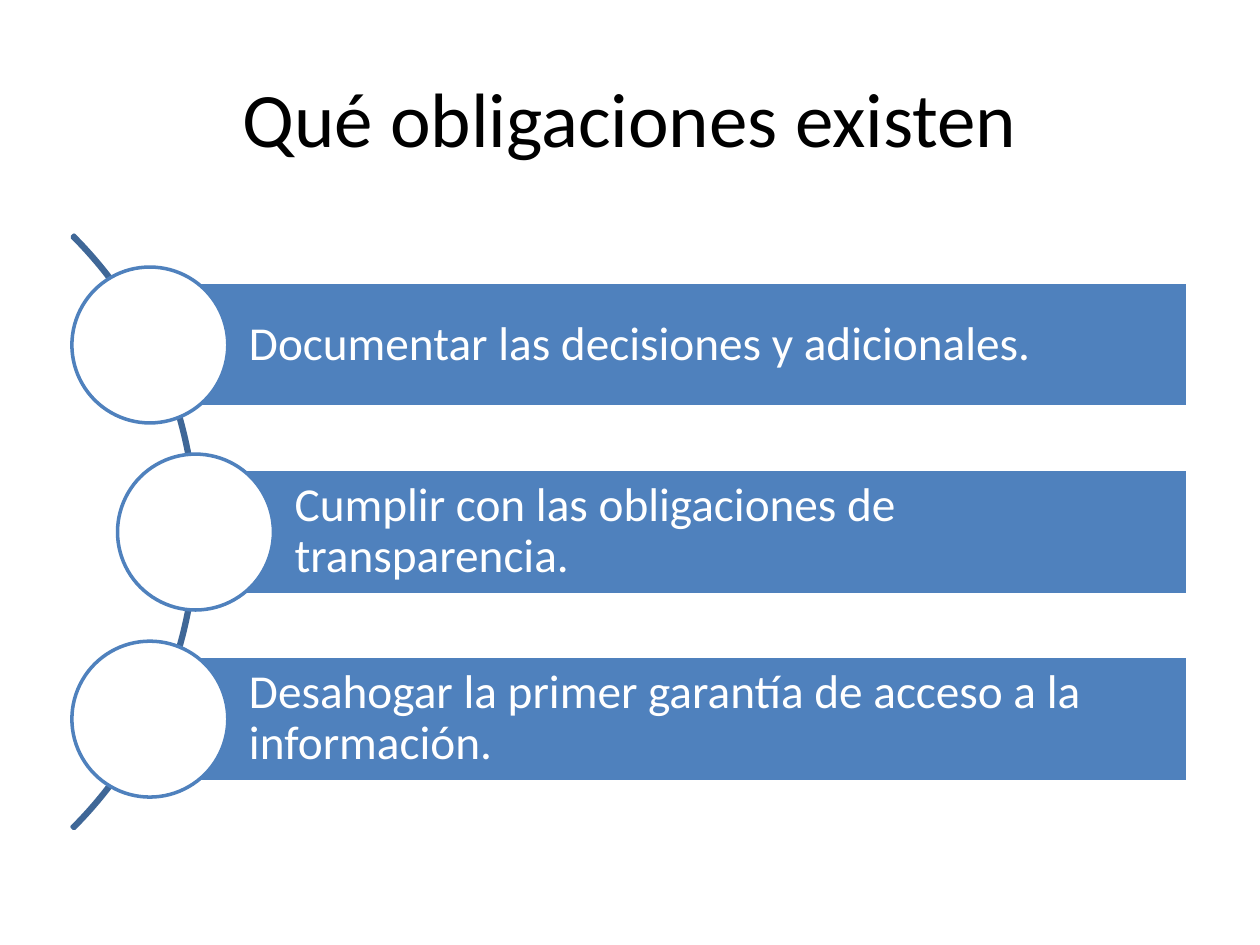
import pptx
import pptx.dml.color
import pptx.enum.shapes
import pptx.enum.text
import pptx.util

Cm = pptx.util.Cm
SHAPES = pptx.enum.shapes.MSO_SHAPE
ALIGN = pptx.enum.text.PP_ALIGN

BLUE = "4F81BD"
DARK_BLUE = "3F6797"
WHITE = "FFFFFF"
BLACK = "000000"

OBLIGATIONS = [
    "Documentar las decisiones y adicionales.",
    "Cumplir con las obligaciones de transparencia.",
    "Desahogar la primer garantía de acceso a la información.",
]


def color(value):
    """Turn a hex string into a colour."""
    return pptx.dml.color.RGBColor.from_string(value)


def write(shape, text, size, fill, align=ALIGN.LEFT, spacing=1.0,
          insets=(0.25, 0.13, 0.25, 0.13)):
    """Write one vertically centred paragraph into a shape."""
    frame = shape.text_frame
    frame.word_wrap = True
    frame.vertical_anchor = pptx.enum.text.MSO_ANCHOR.MIDDLE
    (frame.margin_left, frame.margin_top,
     frame.margin_right, frame.margin_bottom) = map(Cm, insets)
    paragraph = frame.paragraphs[0]
    paragraph.alignment = align
    paragraph.line_spacing = spacing
    run = paragraph.add_run()
    run.text = text
    run.font.name = "Calibri"
    run.font.size = pptx.util.Pt(size)
    run.font.color.rgb = color(fill)


def draw(slide, kind, left, top, width, height, line, fill=None):
    """Add a flat preset shape with lengths in centimetres."""
    shape = slide.shapes.add_shape(kind, Cm(left), Cm(top), Cm(width), Cm(height))
    shape.shadow.inherit = False
    if fill:
        shape.fill.solid()
        shape.fill.fore_color.rgb = color(fill)
    else:
        shape.fill.background()
    shape.line.color.rgb = color(line)
    shape.line.width = pptx.util.Pt(2)
    return shape


def add_title(slide, text, left, top, width, height):
    """Place the centred slide title in its box."""
    title = slide.shapes.add_textbox(Cm(left), Cm(top), Cm(width), Cm(height))
    write(title, text, size=44, fill=BLACK, align=ALIGN.CENTER)


def add_curved_list(slide, items, left, top, width, height):
    """Place bars with circles along an arc inside the box."""
    middle = top + height / 2
    pitch, bar_height, circle = 0.3 * height, height / 5, height / 4
    right = left + width - 0.18
    arc_size = 16.92
    arc = draw(slide, SHAPES.BLOCK_ARC, left - 14.22, middle - arc_size / 2,
               arc_size, arc_size, DARK_BLUE)
    for index, value in enumerate((189, 27, 0.00324)):
        arc.adjustments[index] = value

    for index, text in enumerate(items):
        offset = index - (len(items) - 1) / 2
        center_x = left + (1.75 if offset else 2.67)
        center_y = middle + offset * pitch
        bar = draw(slide, SHAPES.RECTANGLE, center_x, center_y - bar_height / 2,
                   right - center_x, bar_height, WHITE, BLUE)
        write(bar, text, size=27, fill=WHITE, spacing=0.9,
              insets=(2, 0.18, 0.18, 0.18))
        draw(slide, SHAPES.OVAL, center_x - circle / 2, center_y - circle / 2,
             circle, circle, BLUE, WHITE)


def main():
    """Build and save the presentation."""
    presentation = pptx.Presentation()
    presentation.slide_width = Cm(25.4)
    presentation.slide_height = Cm(19.05)
    slide = presentation.slides.add_slide(presentation.slide_layouts[6])
    add_title(slide, "Qué obligaciones existen", 1.27, 0.76, 22.86, 3.18)
    add_curved_list(slide, OBLIGATIONS, 1.27, 4.44, 22.86, 12.57)
    presentation.save("out.pptx")


if __name__ == "__main__":
    main()
